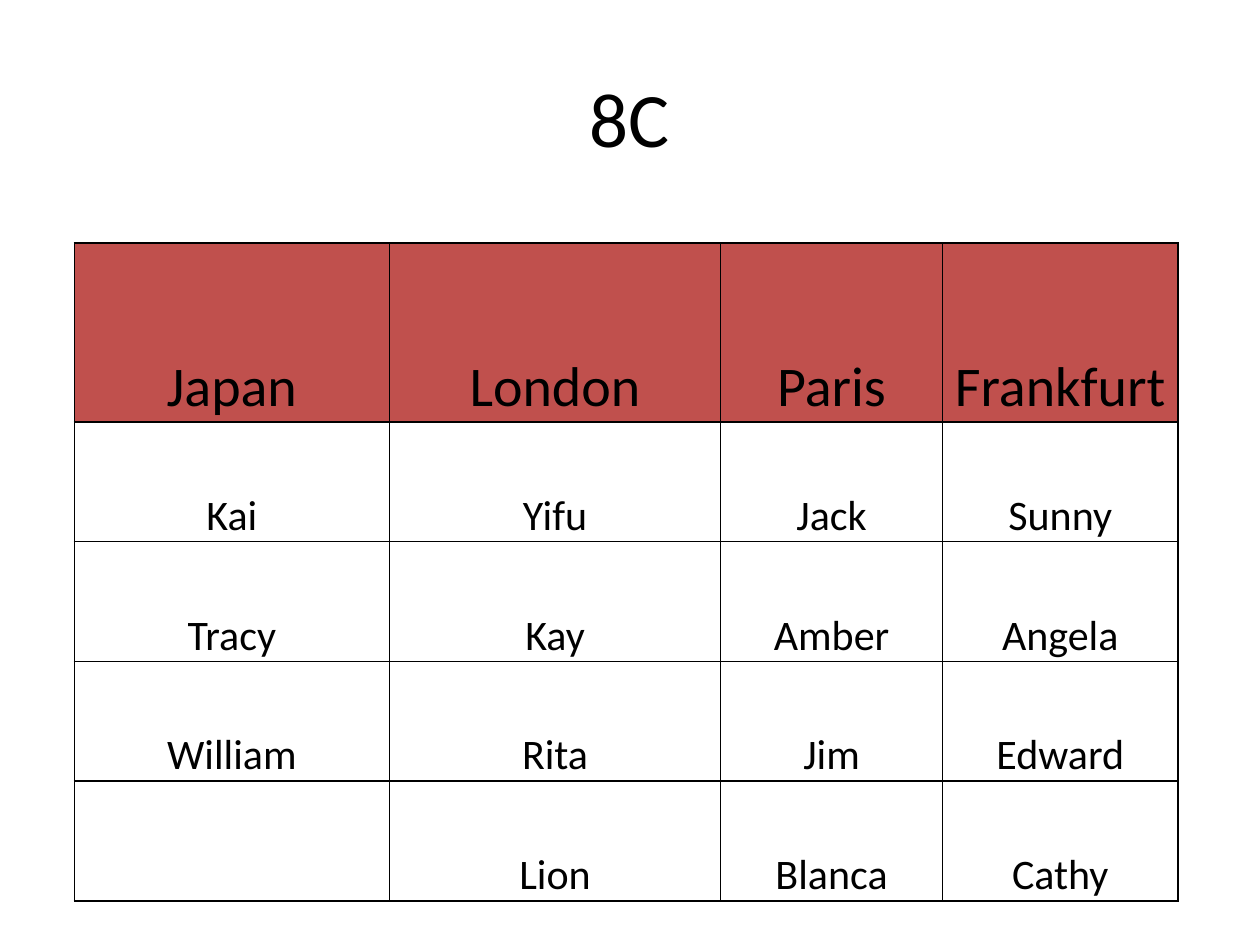
import pptx
import pptx.util
import pptx.dml.color
import pptx.enum.text
import lxml.etree as etree
from pptx.oxml.ns import qn

Inches = pptx.util.Inches
Anchor = pptx.enum.text.MSO_ANCHOR

TITLE = "8C"
ROWS = [
    ["Japan", "London", "Paris", "Frankfurt"],
    ["Kai", "Yifu", "Jack", "Sunny"],
    ["Tracy", "Kay", "Amber", "Angela"],
    ["William", "Rita", "Jim", "Edward"],
    ["", "Lion", "Blanca", "Cathy"],
]
WIDTHS = [2.5, 2.63, 1.76, 1.87]
HEIGHTS = [1.42] + [0.95] * 4
BLACK, RED = "000000", "C0504D"


def color(text):
    return pptx.dml.color.RGBColor.from_string(text)


def write(frame, text, size):
    para = frame.paragraphs[0]
    para.text = text
    para.alignment = pptx.enum.text.PP_ALIGN.CENTER
    para.font.size = pptx.util.Pt(size)
    para.font.name = "Calibri"
    para.font.color.rgb = color(BLACK)


def border(cell):
    props = cell._tc.get_or_add_tcPr()
    for side in ("lnL", "lnR", "lnT", "lnB"):
        line = etree.SubElement(props, qn("a:" + side), w=str(pptx.util.Pt(1)))
        fill = etree.SubElement(line, qn("a:solidFill"))
        etree.SubElement(fill, qn("a:srgbClr"), val=BLACK)


def add_title(slide):
    box = slide.shapes.add_textbox(Inches(0.5), Inches(0.3), Inches(9), Inches(1.25))
    frame = box.text_frame
    frame.word_wrap = True
    frame.vertical_anchor = Anchor.MIDDLE
    write(frame, TITLE, 44)


def add_names(slide):
    table = slide.shapes.add_table(
        len(ROWS), len(WIDTHS), Inches(0.59), Inches(1.93),
        Inches(sum(WIDTHS)), Inches(sum(HEIGHTS)),
    ).table
    table.horz_banding = False
    table.first_row = False
    for col, width in zip(table.columns, WIDTHS):
        col.width = Inches(width)
    for r, names in enumerate(ROWS):
        table.rows[r].height = Inches(HEIGHTS[r])
        for c, name in enumerate(names):
            cell = table.cell(r, c)
            border(cell)
            if r == 0:
                cell.fill.solid()
                cell.fill.fore_color.rgb = color(RED)
            else:
                cell.fill.background()
            cell.margin_left = cell.margin_right = cell.margin_top = Inches(0.01)
            cell.margin_bottom = 0
            cell.vertical_anchor = Anchor.BOTTOM
            write(cell.text_frame, name, 24 if r else 32)


def main():
    deck = pptx.Presentation()
    deck.slide_width, deck.slide_height = Inches(10), Inches(7.5)
    slide = deck.slides.add_slide(deck.slide_layouts[6])
    add_title(slide)
    add_names(slide)
    deck.save("out.pptx")


if __name__ == "__main__":
    main()
